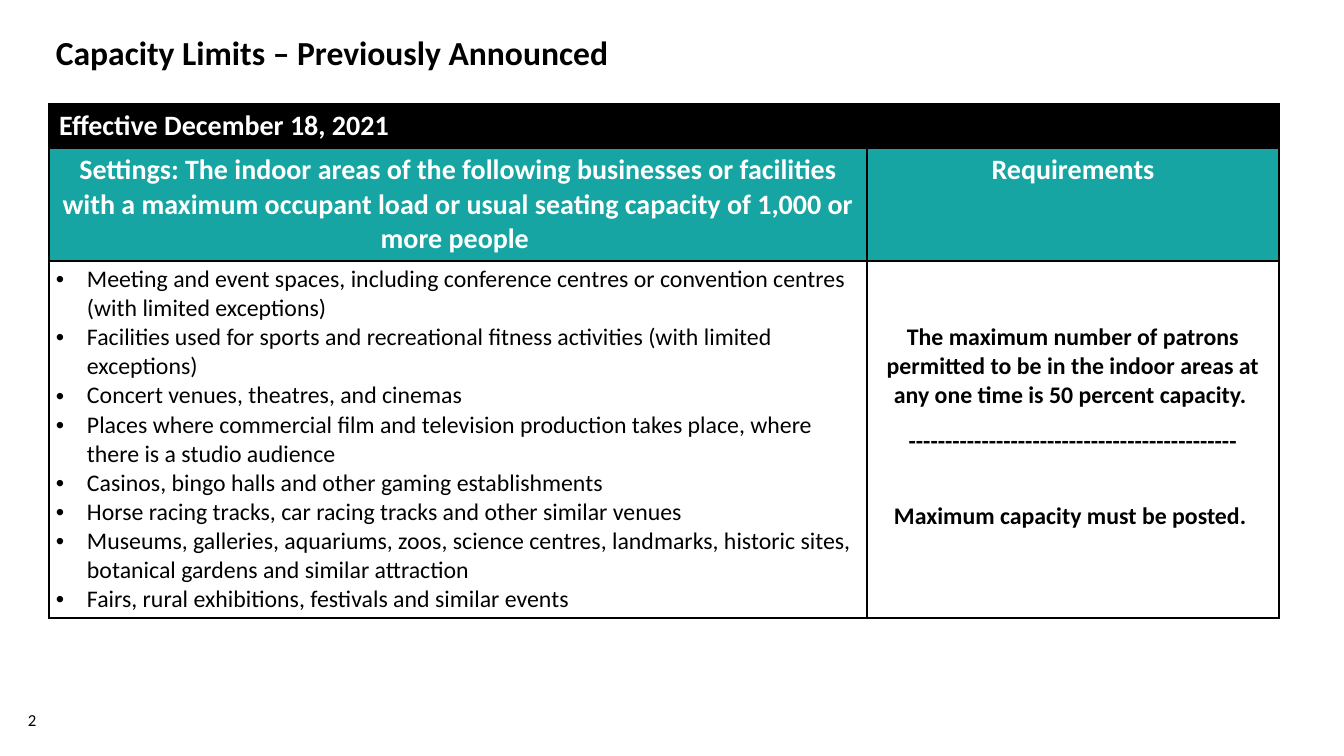
from lxml.etree import SubElement as Sub
from pptx import Presentation
from pptx.dml.color import RGBColor
from pptx.enum.text import MSO_ANCHOR as Anchor, PP_ALIGN as Align
from pptx.oxml.ns import qn
from pptx.util import Emu, Pt

BLACK, WHITE, TEAL = "000000", "FFFFFF", "16A5A3"
SIDES = ("a:lnL", "a:lnR", "a:lnT", "a:lnB")

SETTINGS = [
    "Meeting and event spaces, including conference centres or convention centres (with limited exceptions)",
    "Facilities used for sports and recreational fitness activities (with limited exceptions)",
    "Concert venues, theatres, and cinemas",
    "Places where commercial film and television production takes place, where there is a studio audience",
    "Casinos, bingo halls and other gaming establishments",
    "Horse racing tracks, car racing tracks and other similar venues",
    "Museums, galleries, aquariums, zoos, science centres, landmarks, historic sites, "
    "botanical gardens and similar attraction",
    "Fairs, rural exhibitions, festivals and similar events",
]
RULES = [
    "The maximum number of patrons permitted to be in the indoor areas at any one time is 50 percent capacity. ",
    "-" * 45,
    "Maximum capacity must be posted. ",
]


def px(n):
    return Emu(round(n * 914400 / 100.8))


def color(code):
    return RGBColor.from_string(code)


class Deck:
    def __init__(self, wide, high, font):
        self.font = font
        self.prs = Presentation()
        self.prs.slide_width, self.prs.slide_height = px(wide), px(high)
        self.slide = self.prs.slides.add_slide(self.prs.slide_layouts[6])

    def fill(self, frame, lines, size, ink=BLACK, bold=False, align=Align.LEFT,
             gaps=None, bullet=False, pitch=None):
        """Put lines in a text frame; gaps are the points of space before each."""
        frame.word_wrap = True
        for i, line in enumerate(lines):
            para = frame.paragraphs[0] if i == 0 else frame.add_paragraph()
            para.text = line
            para.alignment = align
            if pitch:
                para.line_spacing = pitch
            if gaps and gaps[i]:
                para.space_before = Pt(gaps[i])
            if bullet:
                props = para._p.get_or_add_pPr()
                props.set("marL", str(px(31)))
                props.set("indent", str(-px(31)))
                Sub(props, qn("a:buFont"), typeface="Arial")
                Sub(props, qn("a:buChar"), char="•")
            font = para.font
            font.name, font.size, font.bold = self.font, Pt(size), bold
            font.color.rgb = color(ink)

    def text(self, box, line, size, anchor=Anchor.TOP, **look):
        frame = self.slide.shapes.add_textbox(*map(px, box)).text_frame
        frame.vertical_anchor = anchor
        self.fill(frame, [line], size, **look)

    def table(self, left, top, cols, rows):
        shape = self.slide.shapes.add_table(
            len(rows), len(cols), px(left), px(top), px(sum(cols)), px(sum(rows)))
        grid = shape.table
        grid.first_row = grid.horz_banding = False
        for col, width in zip(grid.columns, cols):
            col.width = px(width)
        for row, height in zip(grid.rows, rows):
            row.height = px(height)
        return grid

    def cell(self, cell, back, lines=(), size=20, pad=None, **look):
        """Style a table cell; pad is its side, top and bottom margin."""
        props = cell._tc.get_or_add_tcPr()
        for side in SIDES:
            line = Sub(props, qn(side), w=str(Pt(1)))
            Sub(Sub(line, qn("a:solidFill")), qn("a:srgbClr"), val=BLACK)
        cell.fill.solid()
        cell.fill.fore_color.rgb = color(back)
        if pad:
            cell.margin_left = cell.margin_right = px(pad[0])
            cell.margin_top, cell.margin_bottom = px(pad[1]), px(pad[2])
        self.fill(cell.text_frame, lines, size, **look)


def main():
    deck = Deck(1344, 756, "Calibri")
    deck.text((46, 31, 1272, 56), "Capacity Limits – Previously Announced", 24,
              bold=True, pitch=0.9)
    deck.text((18, 700, 56, 40), "2", 12, Anchor.MIDDLE)

    grid = deck.table(49, 104, (818, 412), (44, 113, 357))
    date, rest = grid.cell(0, 0), grid.cell(0, 1)
    deck.cell(date, BLACK, ["Effective December 18, 2021"], ink=WHITE, bold=True)
    deck.cell(rest, BLACK)
    date.merge(rest)

    heads = (
        "Settings: The indoor areas of the following businesses or facilities "
        "with a maximum occupant load or usual seating capacity of 1,000 or more people ",
        "Requirements",
    )
    for i, head in enumerate(heads):
        deck.cell(grid.cell(1, i), TEAL, [head], ink=WHITE, bold=True, align=Align.CENTER)

    deck.cell(grid.cell(2, 0), WHITE, SETTINGS, 17, (7, 4, 4), bullet=True)
    deck.cell(grid.cell(2, 1), WHITE, RULES, 17, (7, 62, 4), bold=True,
              align=Align.CENTER, gaps=(0, 12, 33))
    deck.prs.save("out.pptx")


if __name__ == "__main__":
    main()
